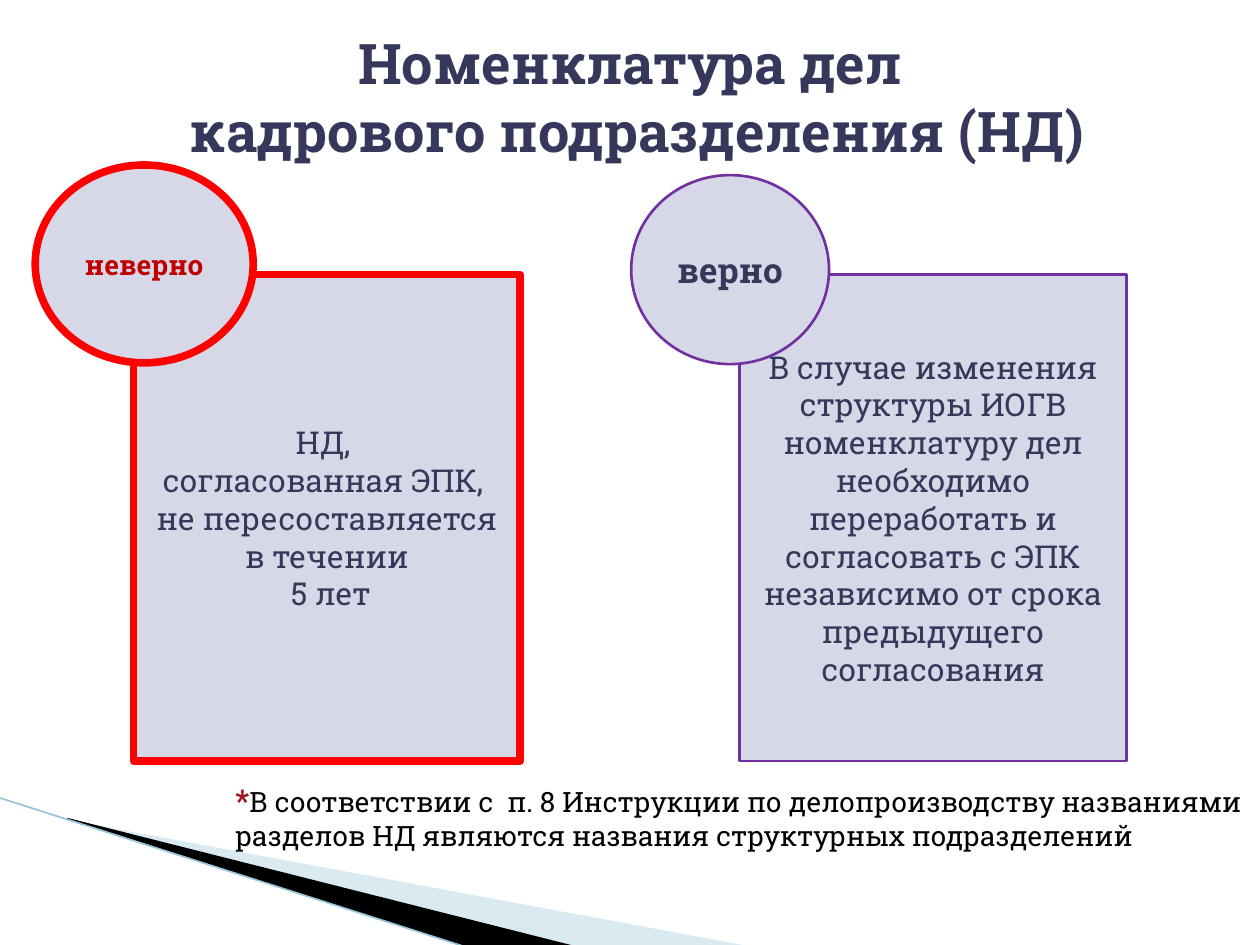
"""Build the slide on the file nomenclature of a personnel department."""
from lxml import etree
from pptx import Presentation
from pptx.dml.color import RGBColor
from pptx.enum.shapes import MSO_CONNECTOR, MSO_SHAPE
from pptx.enum.text import MSO_ANCHOR, MSO_AUTO_SIZE, PP_ALIGN
from pptx.oxml.ns import qn
from pptx.util import Inches, Pt

FONT = "Roboto Slab"
INK = RGBColor(0x35, 0x38, 0x5A)
PANEL = RGBColor(0xD7, 0xD8, 0xE7)
RED = RGBColor(0xFF, 0x00, 0x00)
DARK_RED = RGBColor(0xC0, 0x00, 0x00)
STAR_RED = RGBColor(0xA3, 0x17, 0x1E)
PURPLE = RGBColor(0x70, 0x30, 0xA0)
BLACK = RGBColor(0x00, 0x00, 0x00)
PALE_BLUE = RGBColor(0xA0, 0xCB, 0xDC)
EDGE_BLUE = RGBColor(0x97, 0xC5, 0xD8)


def add_run(paragraph, text, size, color, bold=False):
    run = paragraph.add_run()
    run.text = text
    run.font.name = FONT
    run.font.size = Pt(size)
    run.font.bold = bold
    run.font.color.rgb = color


def add_panel(preset, box, outline, weight, lines, size, color, bold):
    panel = slide.shapes.add_shape(preset, *map(Inches, box))
    panel.shadow.inherit = False
    panel.fill.solid()
    panel.fill.fore_color.rgb = PANEL
    panel.line.color.rgb = outline
    panel.line.width = Pt(weight)
    frame = panel.text_frame
    frame.word_wrap = True
    frame.vertical_anchor = MSO_ANCHOR.MIDDLE
    for index, text in enumerate(lines):
        paragraph = frame.add_paragraph() if index else frame.paragraphs[0]
        paragraph.alignment = PP_ALIGN.CENTER
        add_run(paragraph, text, size, color, bold)


prs = Presentation()
prs.slide_width, prs.slide_height = Inches(10), Inches(7.5)
slide = prs.slides.add_slide(prs.slide_layouts[6])

wedges = [
    (PALE_BLUE, 40, [(0.55, 6.51), (5.95, 7.51), (4.56, 7.51), (0.55, 6.5)]),
    (BLACK, 100, [(0.53, 6.49), (4.57, 7.51), (3.72, 7.52), (0.54, 6.5)]),
]
for color, opacity, points in wedges:
    corners = [(Inches(x), Inches(y)) for x, y in points]
    builder = slide.shapes.build_freeform(*corners[0])
    builder.add_line_segments(corners[1:], close=True)
    wedge = builder.convert_to_shape()
    wedge.shadow.inherit = False
    wedge.fill.solid()
    wedge.fill.fore_color.rgb = color
    wedge.line.fill.background()
    if opacity < 100:
        tint = wedge.fill._xPr.find(".//" + qn("a:srgbClr"))
        etree.SubElement(tint, qn("a:alpha")).set("val", str(opacity * 1000))

edge = slide.shapes.add_connector(
    MSO_CONNECTOR.STRAIGHT, Inches(-0.01), Inches(6.33), Inches(3.71), Inches(7.52))
edge.line.color.rgb = EDGE_BLUE
edge.line.width = Pt(0.95)
etree.SubElement(edge._element.spPr, qn("a:effectLst"))

wrong_rule = ["НД, ", "согласованная ЭПК, ", "не пересоставляется в течении", " 5 лет"]
right_rule = ["В случае изменения структуры ИОГВ номенклатуру дел необходимо переработать "
              "и согласовать с ЭПК независимо от срока предыдущего согласования"]
for left, outline, weight, rule in [(1.06, RED, 4.33, wrong_rule),
                                    (5.87, PURPLE, 1.5, right_rule)]:
    add_panel(MSO_SHAPE.RECTANGLE, (left, 2.18, 3.07, 3.86), outline, weight,
              rule, 18, INK, False)

add_panel(MSO_SHAPE.OVAL, (0.28, 1.31, 1.73, 1.57), RED, 4.33,
          ["неверно"], 16, DARK_RED, True)
add_panel(MSO_SHAPE.OVAL, (5.01, 1.39, 1.57, 1.5), PURPLE, 1.5,
          ["верно"], 20, INK, True)

footnote = slide.shapes.add_textbox(
    Inches(1.77), Inches(6.15), Inches(8.3), Inches(0.98)).text_frame
footnote.word_wrap = False
footnote.auto_size = MSO_AUTO_SIZE.SHAPE_TO_FIT_TEXT
add_run(footnote.paragraphs[0], "*", 18, STAR_RED, True)
add_run(footnote.paragraphs[0],
        "В соответствии с  п. 8 Инструкции по делопроизводству названиями", 16, BLACK)
add_run(footnote.add_paragraph(),
        "разделов НД являются названия структурных подразделений", 16, BLACK)

title = slide.shapes.add_textbox(
    Inches(0.28), Inches(0.18), Inches(9.45), Inches(1.18)).text_frame
title.word_wrap = True
title.auto_size = MSO_AUTO_SIZE.SHAPE_TO_FIT_TEXT
heading = title.paragraphs[0]
heading.alignment = PP_ALIGN.CENTER
add_run(heading, "Номенклатура дел", 32, INK, True)
heading.add_line_break()
add_run(heading, " кадрового подразделения (НД)", 32, INK, True)

prs.save("out.pptx")
